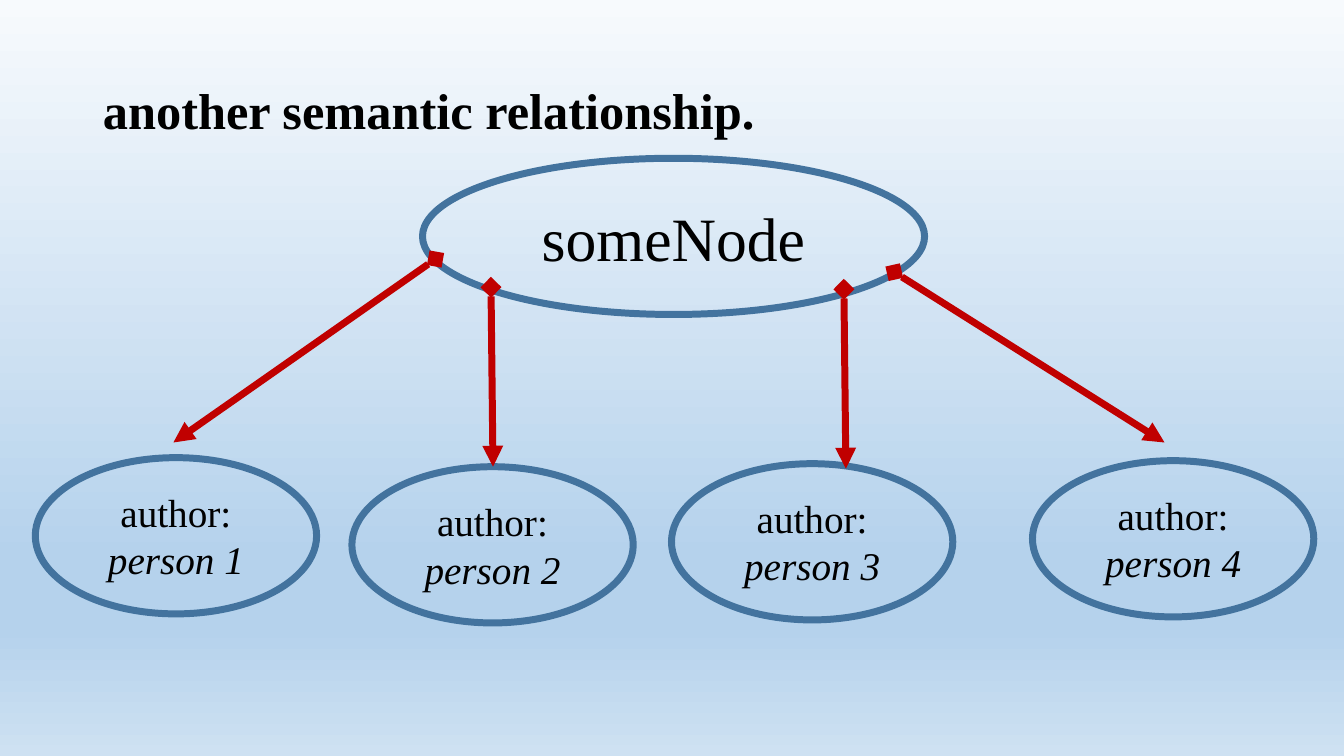
import pptx
import pptx.util
import pptx.dml.color
import pptx.enum.shapes
import pptx.enum.text
import pptx.oxml.ns
from lxml import etree

Inches = pptx.util.Inches
Pt = pptx.util.Pt
qn = pptx.oxml.ns.qn

COLOURS = {"text": "000000", "outline": "43739E", "arrow": "C00000"}
BACKDROP = [(0, "F7FAFD"), (74, "B5D2EC"), (83, "B5D2EC"), (100, "CEE1F2")]
FONT = "Times New Roman"
STROKE = 5

ROOT_BOX = (4.19, 1.57, 4.98, 1.55)
AUTHOR_SIZE = (2.79, 1.55)
# Per author: name, left and top of the oval, start and end of its arrow
AUTHORS = [
    ("person 1", (0.35, 4.54), (4.32, 2.57), (1.72, 4.39)),
    ("person 2", (3.49, 4.63), (4.87, 2.85), (4.89, 4.63)),
    ("person 3", (6.66, 4.6), (8.37, 2.87), (8.39, 4.65)),
    ("person 4", (10.24, 4.57), (8.87, 2.7), (11.55, 4.39)),
]


def colour(name):
    return pptx.dml.color.RGBColor.from_string(COLOURS[name])


def write(para, text, size, bold=False, italic=False, align=None):
    para.alignment = align
    span = para.add_run()
    span.text = text
    span.font.name = FONT
    span.font.size = Pt(size)
    span.font.bold = bold
    span.font.italic = italic
    span.font.color.rgb = colour("text")


def paint_background(page):
    fill = page.background.fill
    fill.gradient()
    fill.gradient_angle = 270
    stops = page.element.find(".//" + qn("a:gsLst"))
    for stop in list(stops):
        stops.remove(stop)
    for percent, shade in BACKDROP:
        stop = etree.SubElement(stops, qn("a:gs"), pos=str(percent * 1000))
        etree.SubElement(stop, qn("a:srgbClr"), val=shade)


def place_title(page, box, text):
    title = page.shapes.title
    title.left, title.top, title.width, title.height = map(Inches, box)
    frame = title.text_frame
    frame.vertical_anchor = pptx.enum.text.MSO_ANCHOR.MIDDLE
    para = frame.paragraphs[0]
    para.line_spacing = 0.9
    write(para, text, 36, bold=True, align=pptx.enum.text.PP_ALIGN.LEFT)


def add_oval(page, box, lines, size):
    """Draw an outlined oval; lines holds (text, italic) pairs."""
    oval = page.shapes.add_shape(
        pptx.enum.shapes.MSO_SHAPE.OVAL, *map(Inches, box))
    oval.shadow.inherit = False
    oval.fill.background()
    oval.line.color.rgb = colour("outline")
    oval.line.width = Pt(STROKE)
    frame = oval.text_frame
    frame.word_wrap = True
    frame.vertical_anchor = pptx.enum.text.MSO_ANCHOR.MIDDLE
    for index, (text, italic) in enumerate(lines):
        para = frame.add_paragraph() if index else frame.paragraphs[0]
        write(para, text, size, italic=italic,
              align=pptx.enum.text.PP_ALIGN.CENTER)


def add_arrow(page, start, end):
    arrow = page.shapes.add_connector(
        pptx.enum.shapes.MSO_CONNECTOR.STRAIGHT, *map(Inches, start + end))
    arrow.line.color.rgb = colour("arrow")
    arrow.line.width = Pt(STROKE)
    properties = arrow.element.spPr
    outline = properties.find(qn("a:ln"))
    etree.SubElement(outline, qn("a:headEnd"), type="diamond")
    etree.SubElement(outline, qn("a:tailEnd"), type="triangle")
    etree.SubElement(properties, qn("a:effectLst"))


def build_relationship_slide(deck):
    page = deck.slides.add_slide(deck.slide_layouts[5])
    paint_background(page)
    place_title(page, (0.92, 0.4, 11.5, 1.45), "another semantic relationship.")

    # Root node and its authors
    add_oval(page, ROOT_BOX, [("someNode", False)], 44)
    for name, corner, _, _ in AUTHORS:
        add_oval(page, corner + AUTHOR_SIZE,
                 [("author:", False), (name, True)], 28)

    # Arrows on top of the ovals
    for _, _, start, end in AUTHORS:
        add_arrow(page, start, end)


def main():
    deck = pptx.Presentation()
    deck.slide_width = Inches(13.33)
    deck.slide_height = Inches(7.5)
    build_relationship_slide(deck)
    deck.save("out.pptx")


if __name__ == "__main__":
    main()
